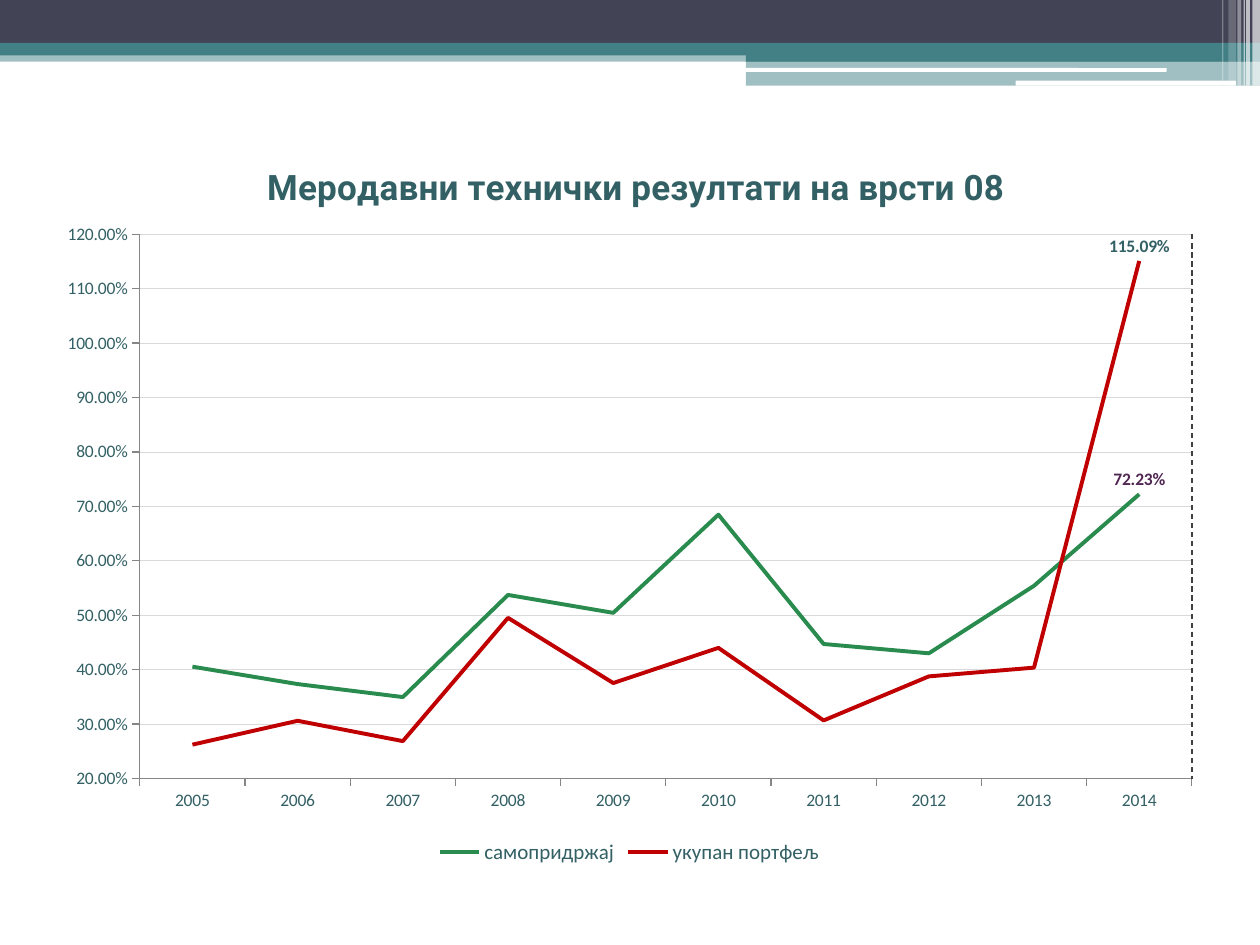
import dataclasses

import pptx
import pptx.chart.data
import pptx.dml.color
import pptx.enum.chart
import pptx.enum.dml
import pptx.enum.shapes
import pptx.oxml.ns
import pptx.oxml.xmlchemy
import pptx.util


@dataclasses.dataclass(frozen=True)
class Theme:
    """Colours, fonts and type sizes of the slide."""
    navy: str = "424456"
    teal: str = "438086"
    white: str = "FFFFFF"
    text: str = "326064"
    axis: str = "868686"
    grid: str = "D9D9D9"
    border: str = "404040"
    body_font: str = "Calibri"
    title_font: str = "Roboto"
    title_size: float = 20
    legend_size: float = 12
    label_size: float = 10


THEME = Theme()
WIDTH, HEIGHT = 10, 7.5
CHART_BOX = (0.35, 0.99, 9.29, 5.91)
PLOT_BOX = (1.11, 1.86, 8.35, 4.32)
TITLE_CORNER = (2.07, 1.25)

BANDS = [
    (0, 0.4, 10, 0.09, THEME.teal, 50),
    (0, 0, 10, 0.34, THEME.navy, 100),
    (0, 0.34, 10, 0.1, THEME.teal, 100),
    (5.92, 0.39, 4.08, 0.1, THEME.teal, 100),
    (5.92, 0.48, 4.08, 0.2, THEME.teal, 50),
]
SLOTS = [(5.91, 0.54, 3.35, 0.03), (8.06, 0.64, 1.75, 0.04)]
STRIPES = [
    (9.94, 0.06, 0.68, 65),
    (9.89, 0.03, 0.68, 65),
    (9.87, 0.01, 0.68, 60),
    (9.82, 0.03, 0.68, 40),
    (9.75, 0.06, 0.64, 20),
    (9.7, 0.01, 0.64, 30),
]

YEARS = [str(year) for year in range(2005, 2015)]
SERIES = [
    ("самопридржај", "298B4E", "502652",
     (0.4055, 0.3735, 0.3496, 0.5373, 0.5044, 0.6847, 0.4471, 0.43, 0.554, 0.7223)),
    ("укупан портфељ", "C00000", "326065",
     (0.2622, 0.306, 0.2687, 0.4952, 0.3754, 0.44, 0.3067, 0.3876, 0.4037, 1.1509)),
]


def rgb(colour):
    """Return the colour object for a hex string."""
    return pptx.dml.color.RGBColor.from_string(colour)


def inches(*lengths):
    """Convert lengths in inches to slide units."""
    return [pptx.util.Inches(length) for length in lengths]


def add_child(parent, tag, **attributes):
    """Append a namespaced child element and return it."""
    child = pptx.oxml.xmlchemy.OxmlElement(tag)
    for name, value in attributes.items():
        child.set(name, str(value))
    parent.append(child)
    return child


def add_bar(slide, box, colour, opacity=100, rounded=False):
    """Add a borderless bar with the given opacity in percent."""
    kinds = pptx.enum.shapes.MSO_SHAPE
    kind = kinds.ROUNDED_RECTANGLE if rounded else kinds.RECTANGLE
    shape = slide.shapes.add_shape(kind, *inches(*box))
    shape.shadow.inherit = False
    shape.line.fill.background()
    shape.fill.solid()
    shape.fill.fore_color.rgb = rgb(colour)
    if opacity < 100:
        fill = shape._element.spPr.find(pptx.oxml.ns.qn("a:solidFill"))
        add_child(fill[0], "a:alpha", val=opacity * 1000)


def add_header(slide):
    """Draw the layered bands and the stripes at the top."""
    for *box, colour, opacity in BANDS:
        add_bar(slide, box, colour, opacity)
    for box in SLOTS:
        add_bar(slide, box, THEME.white, rounded=True)
    for left, width, height, opacity in STRIPES:
        add_bar(slide, (left, 0, width, height), THEME.white, opacity)


def set_font(font, size, colour, name=THEME.body_font, bold=False):
    """Apply one type style."""
    font.name, font.size, font.bold = name, pptx.util.Pt(size), bold
    font.color.rgb = rgb(colour)


def set_layout(element, index, inner=False, **shares):
    """Place a chart part by shares of the chart's size."""
    for old in element.findall(pptx.oxml.ns.qn("c:layout")):
        element.remove(old)
    layout = pptx.oxml.xmlchemy.OxmlElement("c:layout")
    manual = add_child(layout, "c:manualLayout")
    if inner:
        add_child(manual, "c:layoutTarget", val="inner")
    for side in ("x", "y"):
        add_child(manual, f"c:{side}Mode", val="edge")
    for name, share in shares.items():
        add_child(manual, f"c:{name}", val=round(share, 4))
    element.insert(index, layout)


def chart_shares(left, top):
    """Return a slide position as shares of the chart's size."""
    chart_left, chart_top, width, height = CHART_BOX
    return {"x": (left - chart_left) / width, "y": (top - chart_top) / height}


def style_axis(axis):
    """Format an axis line, its ticks and its labels."""
    axis.major_tick_mark = pptx.enum.chart.XL_TICK_MARK.OUTSIDE
    axis.format.line.color.rgb = rgb(THEME.axis)
    axis.format.line.width = pptx.util.Pt(0.75)
    set_font(axis.tick_labels.font, THEME.label_size, THEME.text)


def style_series(series, colour, label_colour):
    """Format a line and label its last point."""
    series.smooth = False
    series.marker.style = pptx.enum.chart.XL_MARKER_STYLE.NONE
    series.format.line.color.rgb = rgb(colour)
    series.format.line.width = pptx.util.Pt(2.25)
    labels = series.data_labels
    labels.show_value = False
    labels.number_format, labels.number_format_is_linked = "0.00%", False
    label = series.points[len(YEARS) - 1].data_label
    set_font(label.font, THEME.label_size, label_colour, bold=True)
    label.position = pptx.enum.chart.XL_LABEL_POSITION.ABOVE


def add_results_chart(slide):
    """Add the line chart of technical results by year."""
    data = pptx.chart.data.CategoryChartData(number_format="0.00%")
    data.categories = YEARS
    for name, _, _, values in SERIES:
        data.add_series(name, values)
    chart = slide.shapes.add_chart(
        pptx.enum.chart.XL_CHART_TYPE.LINE, *inches(*CHART_BOX), data).chart
    set_font(chart.font, THEME.label_size, THEME.text)

    paragraph = chart.chart_title.text_frame.paragraphs[0]
    paragraph.text = "Меродавни технички резултати на врсти 08"
    set_font(paragraph.font, THEME.title_size, THEME.text, THEME.title_font, True)
    set_layout(chart.chart_title._element, 1, **chart_shares(*TITLE_CORNER))

    left, top, width, height = PLOT_BOX
    set_layout(chart._chartSpace.chart.plotArea, 0, inner=True, **chart_shares(left, top),
               w=width / CHART_BOX[2], h=height / CHART_BOX[3])

    style_axis(chart.category_axis)
    value_axis = chart.value_axis
    style_axis(value_axis)
    value_axis.minimum_scale, value_axis.maximum_scale = 0.2, 1.2
    value_axis.major_unit = 0.1
    value_axis.tick_labels.number_format = "0.00%"
    value_axis.tick_labels.number_format_is_linked = False
    value_axis.major_gridlines.format.line.color.rgb = rgb(THEME.grid)
    value_axis.major_gridlines.format.line.width = pptx.util.Pt(0.5)

    chart.has_legend = True
    chart.legend.position = pptx.enum.chart.XL_LEGEND_POSITION.BOTTOM
    chart.legend.include_in_layout = False
    set_font(chart.legend.font, THEME.legend_size, THEME.text)
    for series, (_, colour, label_colour, _) in zip(chart.plots[0].series, SERIES):
        style_series(series, colour, label_colour)


def add_right_border(slide):
    """Add the dashed line along the right side of the plot."""
    left, top, width, height = PLOT_BOX
    right = left + width
    line = slide.shapes.add_connector(
        pptx.enum.shapes.MSO_CONNECTOR.STRAIGHT, *inches(right, top, right, top + height))
    line.line.color.rgb = rgb(THEME.border)
    line.line.width = pptx.util.Pt(0.75)
    line.line.dash_style = pptx.enum.dml.MSO_LINE.DASH
    add_child(line._element.spPr, "a:effectLst")


def main():
    """Build and save the slide."""
    presentation = pptx.Presentation()
    presentation.slide_width, presentation.slide_height = inches(WIDTH, HEIGHT)
    slide = presentation.slides.add_slide(presentation.slide_layouts[6])
    add_header(slide)
    add_results_chart(slide)
    add_right_border(slide)
    presentation.save("out.pptx")


if __name__ == "__main__":
    main()
